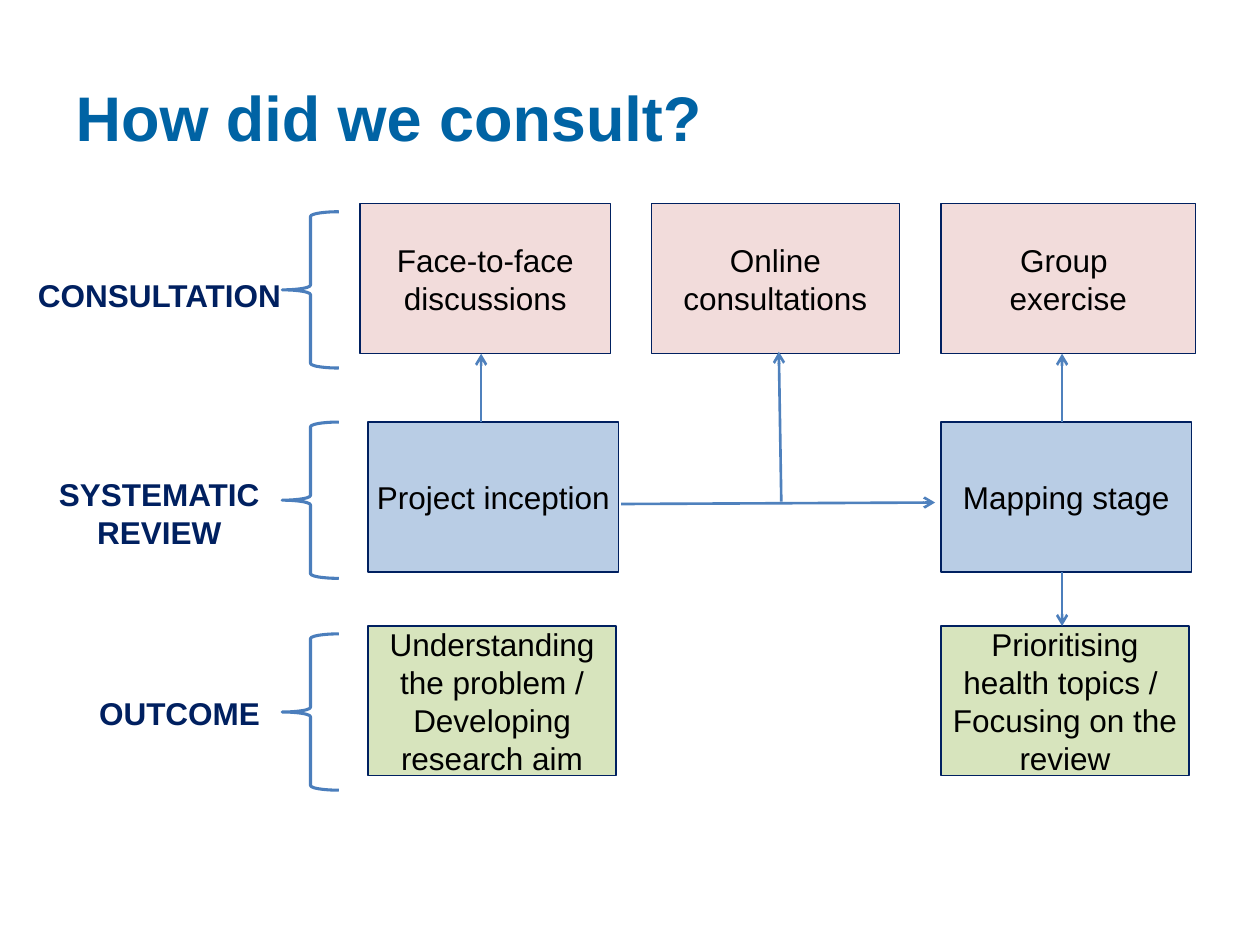
from lxml import etree
from pptx import Presentation
from pptx.dml.color import RGBColor
from pptx.enum.shapes import MSO_CONNECTOR, MSO_SHAPE
from pptx.enum.text import MSO_ANCHOR, PP_ALIGN
from pptx.oxml.ns import qn
from pptx.util import Cm, Pt

TITLE = "How did we consult?"
COLORS = {
    "title": "0063A4", "navy": "002060", "text": "000000",
    "pink": "F2DCDB", "blue": "B9CDE5", "green": "D7E4BD",
    "brace": "4B7EBC", "arrow": "4F81BD",
}
ROWS = [
    {"fill": "pink", "top": 4.11, "brace": 4.27,
     "label": ("CONSULTATION", 0, 5.44, 6.43, 1.02),
     "boxes": [("Face-to-face discussions", 7.26, 5.05),
               ("Online consultations", 13.13, 5),
               ("Group \nexercise", 18.97, 5.13)]},
    {"fill": "blue", "top": 8.51, "brace": 8.51,
     "label": ("SYSTEMATIC\nREVIEW", 0.71, 9.45, 5, 1.8),
     "boxes": [("Project inception", 7.42, 5.05),
               ("Mapping stage", 18.97, 5.05)]},
    {"fill": "green", "top": 12.62, "brace": 12.78,
     "label": ("OUTCOME", 1.73, 13.87, 3.78, 1.02),
     "boxes": [("Understanding the problem /\nDeveloping research aim", 7.42, 5),
               ("Prioritising health topics / \nFocusing on the review", 18.97, 5)]},
]
BOX_H = 3.02
BRACE_X, BRACE_W, BRACE_H = 5.69, 1.14, 3.15
INSET = 0.08
ARROWS = [
    (12.52, 10.16, 18.85, 10.13, "arrow"),
    (15.75, 10.11, 15.7, 7.09, "arrow"),
    (9.7, 8.51, 9.7, 7.13, "arrow"),
    (21.41, 8.51, 21.41, 7.13, "arrow"),
    (21.41, 11.53, 21.41, 12.62, "brace"),
]


def rgb(name):
    return RGBColor.from_string(COLORS[name])


def set_text(tf, text, size, color, bold=False, align=PP_ALIGN.CENTER):
    tf.text = text
    for p in tf.paragraphs:
        p.alignment = align
        for r in p.runs:
            r.font.name = "Arial"
            r.font.size = Pt(size)
            r.font.bold = bold
            r.font.color.rgb = rgb(color)


def add_box(s, text, x, y, w, fill):
    sp = s.shapes.add_shape(MSO_SHAPE.FLOWCHART_PROCESS, Cm(x), Cm(y), Cm(w), Cm(BOX_H))
    sp.shadow.inherit = False
    sp.fill.solid()
    sp.fill.fore_color.rgb = rgb(fill)
    sp.line.color.rgb = rgb("navy")
    sp.line.width = Pt(0.75)
    tf = sp.text_frame
    tf.margin_left = tf.margin_right = tf.margin_top = tf.margin_bottom = Cm(INSET)
    tf.vertical_anchor = MSO_ANCHOR.MIDDLE
    tf.word_wrap = True
    set_text(tf, text, 18, "text")


def add_label(s, text, x, y, w, h):
    tf = s.shapes.add_textbox(Cm(x), Cm(y), Cm(w), Cm(h)).text_frame
    tf.word_wrap = False
    set_text(tf, text, 18, "navy", bold=True)


def add_brace(s, y):
    sp = s.shapes.add_shape(MSO_SHAPE.LEFT_BRACE, Cm(BRACE_X), Cm(y), Cm(BRACE_W), Cm(BRACE_H))
    sp.shadow.inherit = False
    sp.fill.background()
    sp.line.color.rgb = rgb("brace")
    sp.line.width = Pt(1.75)


def add_arrow(s, x1, y1, x2, y2, color):
    c = s.shapes.add_connector(MSO_CONNECTOR.STRAIGHT, Cm(x1), Cm(y1), Cm(x2), Cm(y2))
    c.line.color.rgb = rgb(color)
    c.line.width = Pt(1.5)
    etree.SubElement(c.line._get_or_add_ln(), qn("a:tailEnd"), type="arrow")
    etree.SubElement(c._element.spPr, qn("a:effectLst"))


def main():
    prs = Presentation()
    prs.slide_width, prs.slide_height = Cm(25.4), Cm(19.05)
    s = prs.slides.add_slide(prs.slide_layouts[5])

    title = s.shapes.title
    title.left, title.top, title.width, title.height = Cm(1.27), Cm(0.76), Cm(22.86), Cm(3.18)
    title.text_frame.vertical_anchor = MSO_ANCHOR.MIDDLE
    set_text(title.text_frame, TITLE, 36, "title", bold=True, align=PP_ALIGN.LEFT)

    for row in ROWS:
        add_label(s, *row["label"])
        add_brace(s, row["brace"])
        for text, x, w in row["boxes"]:
            add_box(s, text, x, row["top"], w, row["fill"])
    for arrow in ARROWS:
        add_arrow(s, *arrow)

    prs.save("out.pptx")


if __name__ == "__main__":
    main()
